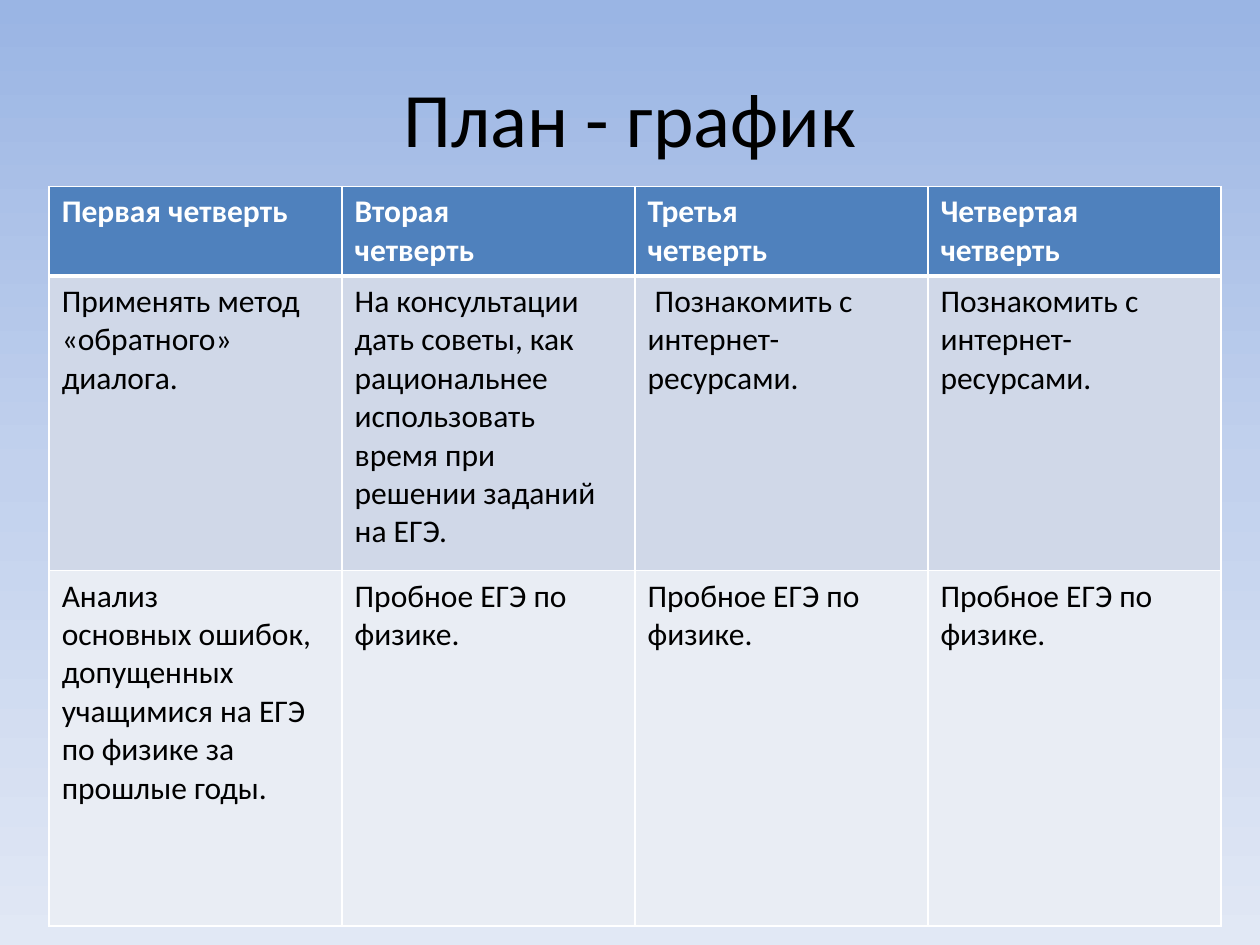
import copy
from dataclasses import dataclass

import lxml.etree
import pptx
import pptx.dml.color
import pptx.enum.text
import pptx.oxml.ns
import pptx.util
from pptx.util import Inches


@dataclass(frozen=True)
class Theme:
    font: str = "Calibri"
    title_size: int = 44
    table_size: int = 18
    text: str = "000000"
    white: str = "FFFFFF"
    header_fill: str = "4F81BD"
    band_fills: tuple = ("D0D8E8", "E9EDF4")
    background: tuple = ((0, "9AB5E4"), (0.5, "C2D1ED"), (1, "E1E8F5"))
    border: int = 1
    header_border: int = 3


THEME = Theme()
ROW_HEIGHTS = (0.71, 2.34, 2.82)
# Each cell is a tuple of paragraphs.
PLAN = (
    (("Первая четверть",), ("Вторая", "четверть"),
     ("Третья", "четверть"), ("Четвертая", "четверть")),
    (("Применять метод «обратного» диалога.",),
     ("На консультации дать советы, как рациональнее использовать время "
      "при решении заданий на ЕГЭ.",),
     (" Познакомить с интернет-ресурсами.",),
     ("Познакомить с интернет-ресурсами.",)),
    (("Анализ",
      "основных ошибок, допущенных учащимися на ЕГЭ по физике за прошлые годы."),
     *[("Пробное ЕГЭ по физике.",)] * 3),
)


def rgb(value):
    return pptx.dml.color.RGBColor.from_string(value)


def write_paragraphs(text_frame, texts, size, color, bold=False, alignment=None):
    for index, text in enumerate(texts):
        paragraph = text_frame.add_paragraph() if index else text_frame.paragraphs[0]
        paragraph.alignment = alignment
        run = paragraph.add_run()
        run.text = text
        run.font.name = THEME.font
        run.font.size = pptx.util.Pt(size)
        run.font.bold = bold
        run.font.color.rgb = rgb(color)


def set_background(slide):
    fill = slide.background.fill
    fill.gradient()
    fill.gradient_angle = 270
    stop_list = slide.element.find(".//" + pptx.oxml.ns.qn("a:gsLst"))
    stop_list.append(copy.deepcopy(stop_list[-1]))
    for stop, (position, color) in zip(fill.gradient_stops, THEME.background):
        stop.position = position
        stop.color.rgb = rgb(color)


def set_borders(cell, top, bottom):
    """Draw white borders; top and bottom are widths in points."""
    properties = cell._tc.get_or_add_tcPr()
    widths = {"lnL": THEME.border, "lnR": THEME.border, "lnT": top, "lnB": bottom}
    qn = pptx.oxml.ns.qn
    for index, (tag, width) in enumerate(widths.items()):
        line = lxml.etree.Element(qn("a:" + tag), w=str(pptx.util.Pt(width)))
        fill = lxml.etree.SubElement(line, qn("a:solidFill"))
        lxml.etree.SubElement(fill, qn("a:srgbClr"), val=THEME.white)
        properties.insert(index, line)


def add_title(slide, left, top, width, height):
    text_frame = slide.shapes.add_textbox(left, top, width, height).text_frame
    text_frame.word_wrap = True
    text_frame.vertical_anchor = pptx.enum.text.MSO_ANCHOR.MIDDLE
    write_paragraphs(text_frame, ("План - график",), THEME.title_size, THEME.text,
                     alignment=pptx.enum.text.PP_ALIGN.CENTER)


def add_plan_table(slide, left, top, width, height):
    row_count, column_count = len(PLAN), len(PLAN[0])
    table = slide.shapes.add_table(
        row_count, column_count, left, top, width, height).table
    for column in table.columns:
        column.width = width // column_count
    for row, row_height in zip(table.rows, ROW_HEIGHTS):
        row.height = Inches(row_height)

    fills = (THEME.header_fill, *THEME.band_fills)
    for row_index, row_texts in enumerate(PLAN):
        is_header = row_index == 0
        for column_index, texts in enumerate(row_texts):
            cell = table.cell(row_index, column_index)
            cell.fill.solid()
            cell.fill.fore_color.rgb = rgb(fills[row_index])
            set_borders(
                cell,
                top=THEME.header_border if row_index == 1 else THEME.border,
                bottom=THEME.header_border if is_header else THEME.border)
            write_paragraphs(cell.text_frame, texts, THEME.table_size,
                             THEME.white if is_header else THEME.text, is_header)


def main():
    presentation = pptx.Presentation()
    presentation.slide_width = Inches(10)
    presentation.slide_height = Inches(7.5)
    slide = presentation.slides.add_slide(presentation.slide_layouts[6])
    set_background(slide)
    add_title(slide, Inches(0.5), Inches(0.3), Inches(9), Inches(1.25))
    add_plan_table(slide, Inches(0.39), Inches(1.48), Inches(9.3),
                   Inches(sum(ROW_HEIGHTS)))
    presentation.save("out.pptx")


if __name__ == "__main__":
    main()
